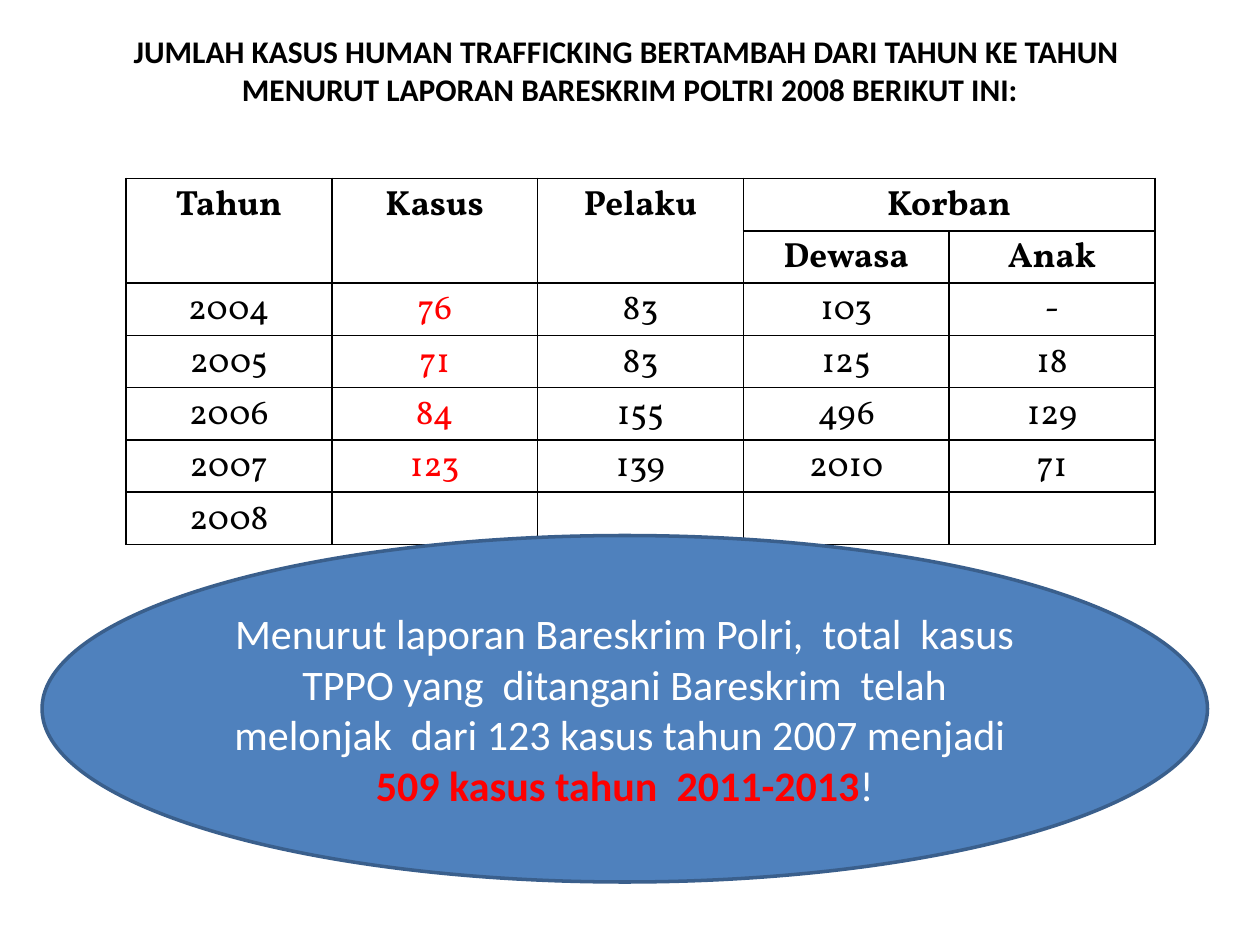
"""Build the slide on yearly human trafficking cases."""
import pptx
import pptx.util
import pptx.dml.color
import pptx.enum.shapes
import pptx.enum.text
import pptx.oxml

Pt = pptx.util.Pt
MID = pptx.enum.text.MSO_ANCHOR.MIDDLE
HUES = {"ink": "000000", "red": "FF0000", "white": "FFFFFF",
        "blue": "4F81BD", "edge": "3A5F8C"}
HEADS = [["Tahun", "Kasus", "Pelaku", "Korban", ""],
         ["", "", "", "Dewasa", "Anak"]]
CASES = [["2004", "76", "83", "103", "-"],
         ["2005", "71", "83", "125", "18"],
         ["2006", "84", "155", "496", "129"],
         ["2007", "123", "139", "2010", "71"],
         ["2008", "", "", "", ""]]


def color(name):
    """Return the named colour."""
    return pptx.dml.color.RGBColor.from_string(HUES[name])


def write(para, text, size=20, face="Calibri", hue="ink", bold=False, lead=None):
    """Add centred text to a paragraph, breaking lines at newlines."""
    para.alignment = pptx.enum.text.PP_ALIGN.CENTER
    if lead:
        para.line_spacing = lead
    for num, line in enumerate(text.split("\n")):
        if num:
            para.add_line_break()
        run = para.add_run()
        run.text = line
        run.font.size = Pt(size)
        run.font.name = face
        run.font.bold = bold
        run.font.color.rgb = color(hue)


def frame(cell):
    """Draw thin lines on all four sides of a cell."""
    props = cell._tc.get_or_add_tcPr()
    for num, side in enumerate("LRTB"):
        props.insert(num, pptx.oxml.parse_xml(
            f'<a:ln{side} xmlns:a="http://schemas.openxmlformats.org/drawingml/2006/main" '
            f'w="{Pt(1)}"><a:solidFill><a:srgbClr val="{HUES["ink"]}"/>'
            f'</a:solidFill></a:ln{side}>'))


def title(slide, left, top, width, height):
    """Place the heading."""
    body = slide.shapes.add_textbox(Pt(left), Pt(top), Pt(width), Pt(height)).text_frame
    body.word_wrap = True
    body.vertical_anchor = MID
    body.margin_bottom = Pt(23)
    write(body.paragraphs[0],
          "JUMLAH KASUS HUMAN TRAFFICKING BERTAMBAH DARI TAHUN KE TAHUN \n"
          "MENURUT LAPORAN BARESKRIM POLTRI 2008 BERIKUT INI:", size=18, bold=True)


def table(slide, left, top, width, height):
    """Place the table of cases, offenders and victims."""
    rows = HEADS + CASES
    grid = slide.shapes.add_table(len(rows), len(rows[0]), Pt(left), Pt(top),
                                  Pt(width), Pt(height)).table
    grid.first_row = grid.horz_banding = False
    for r, row in enumerate(rows):
        grid.rows[r].height = Pt(height / len(rows))
        head = r < len(HEADS)
        for c, text in enumerate(row):
            cell = grid.cell(r, c)
            cell.fill.background()
            frame(cell)
            cell.margin_left = cell.margin_right = Pt(5)
            cell.margin_top = cell.margin_bottom = 0
            if text:
                hue = "red" if c == 1 and not head else "ink"
                write(cell.text_frame.paragraphs[0], text, face="Vollkorn",
                      hue=hue, bold=head, lead=1.07)
    for c in range(3):
        grid.cell(0, c).merge(grid.cell(1, c))
        grid.cell(0, c).text_frame.paragraphs[0].space_before = Pt(6)
    grid.cell(0, 3).merge(grid.cell(0, 4))


def note(slide, left, top, width, height):
    """Place the ellipse with the closing remark."""
    oval = slide.shapes.add_shape(pptx.enum.shapes.MSO_SHAPE.OVAL, Pt(left), Pt(top),
                                  Pt(width), Pt(height))
    oval.shadow.inherit = False
    oval.fill.solid()
    oval.fill.fore_color.rgb = color("blue")
    oval.line.color.rgb = color("edge")
    oval.line.width = Pt(2)
    body = oval.text_frame
    body.word_wrap = True
    body.vertical_anchor = MID
    write(body.paragraphs[0],
          "Menurut laporan Bareskrim Polri,  total  kasus TPPO yang  ditangani "
          "Bareskrim  telah melonjak  dari 123 kasus tahun 2007 menjadi ",
          size=24, hue="white")
    last = body.add_paragraph()
    write(last, "509 kasus tahun  2011-2013", size=24, hue="red", bold=True)
    write(last, "!", size=24, hue="white")


def main():
    """Build and save the slide."""
    deck = pptx.Presentation()
    deck.slide_width, deck.slide_height = Pt(720), Pt(540)
    slide = deck.slides.add_slide(deck.slide_layouts[6])
    title(slide, 36, 21.6, 648, 56.2)
    table(slide, 72, 102, 588, 209.3)
    note(slide, 24, 306, 666, 198)
    deck.save("out.pptx")


if __name__ == "__main__":
    main()
